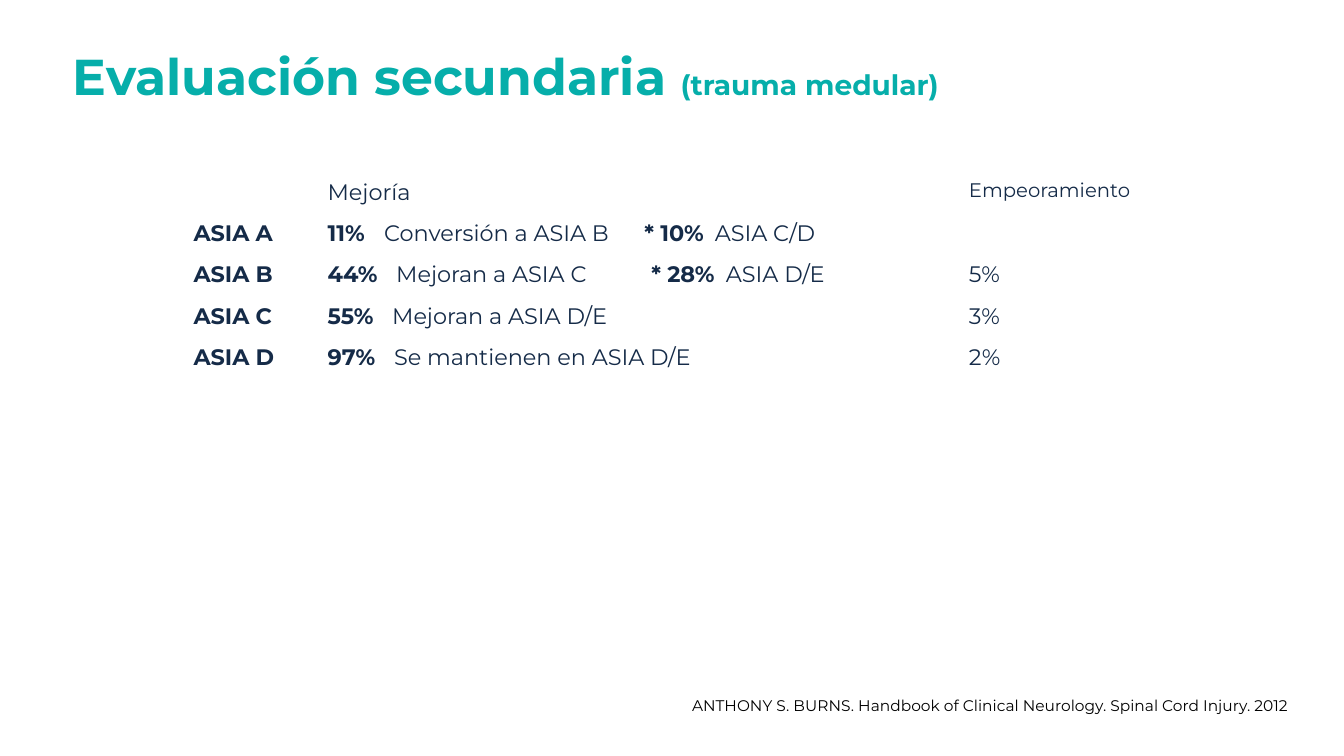
from pptx import Presentation
from pptx.dml.color import RGBColor
from pptx.enum import text as t
from pptx.oxml import parse_xml
from pptx.oxml.ns import nsdecls
from pptx.util import Inches, Pt

TEAL = RGBColor(0x06, 0xAE, 0xAA)
NAVY = RGBColor(0x15, 0x2B, 0x48)
BLACK = RGBColor(0, 0, 0)
FONT = "Montserrat"

# Content
TITLE = [("Evaluación secundaria ", 36, True), ("(trauma medular)", 20, True)]
HEADS = ["", [("Mejoría", 16, False)], [("Empeoramiento", 14, False)]]
# grade, share, change, further share, further grade, worse, tab stops
GRADES = [
    ("ASIA A", "11%", "Conversión a ASIA B", "* 10%", "ASIA C/D", "", (0.56, 3.14, 3.84)),
    ("ASIA B", "44%", "Mejoran a ASIA C", "* 28%", "ASIA D/E", "5%", (0.68, 3.21, 3.95)),
    ("ASIA C", "55%", "Mejoran a ASIA D/E", "", "", "3%", (0.64,)),
    ("ASIA D", "97%", "Se mantienen en ASIA D/E", "", "", "2%", (0.66,)),
]
SOURCE = "ANTHONY S. BURNS. Handbook of Clinical Neurology. Spinal Cord Injury. 2012"
WIDTHS = (1.33, 6.36, 2)
ROW = 0.41


def write(frame, runs, color=NAVY, align=t.PP_ALIGN.LEFT, stops=(), space=1.0):
    """Fill the first paragraph with (text, size, bold) runs."""
    para = frame.paragraphs[0]
    para.alignment = align
    para.line_spacing = space
    if stops:
        tabs = "".join(f'<a:tab pos="{Inches(s)}" algn="l"/>' for s in stops)
        para._p.get_or_add_pPr().append(
            parse_xml(f'<a:tabLst {nsdecls("a")}>{tabs}</a:tabLst>'))
    for words, size, bold in runs:
        run = para.add_run()
        run.text = words
        font = run.font
        font.name, font.size, font.bold = FONT, Pt(size), bold
        font.color.rgb = color


deck = Presentation()
deck.slide_width, deck.slide_height = Inches(13.33), Inches(7.5)
slide = deck.slides.add_slide(deck.slide_layouts[5])

# Title
title = slide.shapes.title
title.left, title.top = Inches(0.62), Inches(0.35)
title.width, title.height = Inches(11.5), Inches(0.87)
title.text_frame.vertical_anchor = t.MSO_ANCHOR.MIDDLE
title.text_frame.auto_size = t.MSO_AUTO_SIZE.NONE
write(title.text_frame, TITLE, color=TEAL, space=0.9)

# Table rows: each cell holds its runs and tab stops
rows = [[(head, ()) for head in HEADS]]
for grade, share, change, more, goal, worse, stops in GRADES:
    runs = [(share + "\t", 16, True), (change, 16, False)]
    if more:
        runs += [("\t" + more + "\t", 16, True), (goal, 16, False)]
    rows.append([([(grade, 16, True)], ()), (runs, stops),
                 ([(worse, 16, False)] if worse else [], ())])

# Table
table = slide.shapes.add_table(
    len(rows), len(WIDTHS), Inches(1.82), Inches(1.72),
    Inches(sum(WIDTHS)), Inches(ROW * len(rows))).table
table.first_row = table.horz_banding = False
for col, width in zip(table.columns, WIDTHS):
    col.width = Inches(width)
for r, row in enumerate(rows):
    table.rows[r].height = Inches(ROW)
    for c, (runs, stops) in enumerate(row):
        cell = table.cell(r, c)
        cell.fill.background()
        write(cell.text_frame, runs, stops=stops)

# Source line
box = slide.shapes.add_textbox(Inches(5.65), Inches(6.86), Inches(7.23), Inches(0.29))
box.text_frame.word_wrap = True
write(box.text_frame, [(SOURCE, 11, False)], color=BLACK, align=t.PP_ALIGN.RIGHT)

deck.save("out.pptx")
